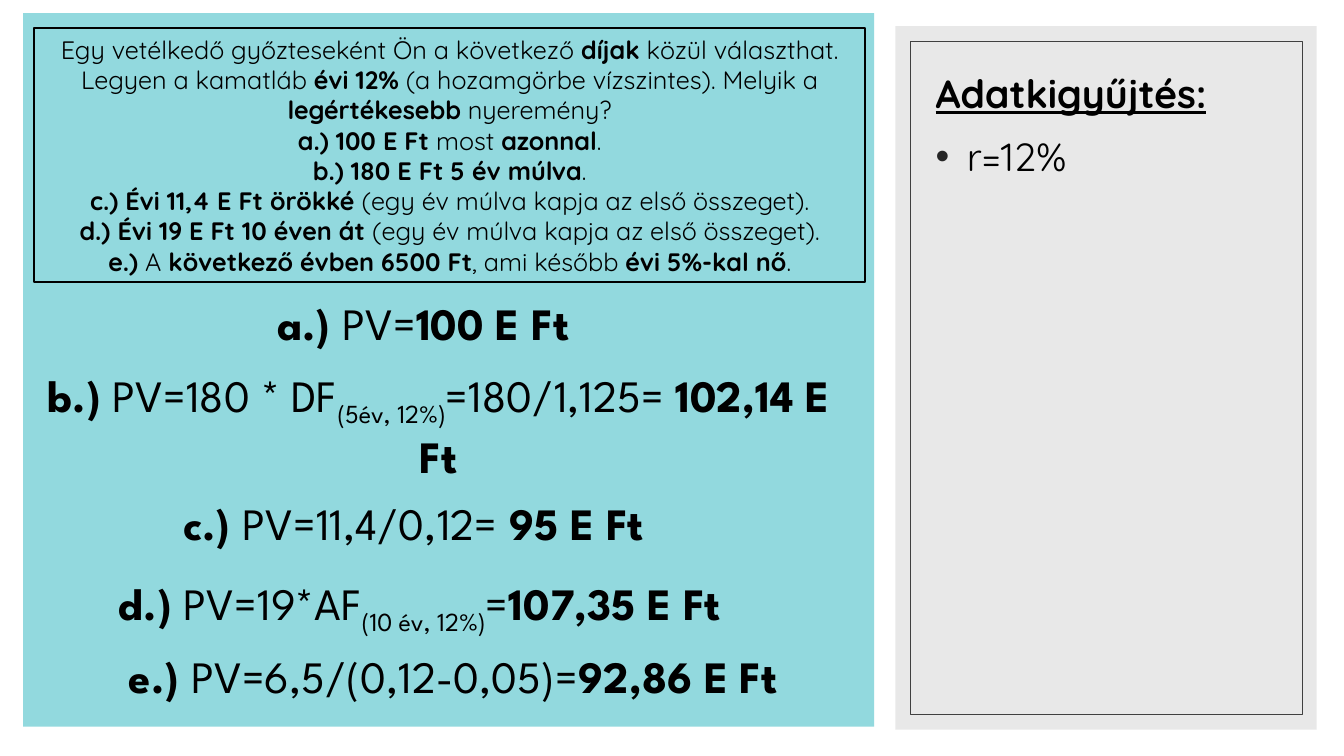
from pptx import Presentation
from pptx.dml.color import RGBColor
from pptx.enum.shapes import MSO_SHAPE
from pptx.enum.text import MSO_ANCHOR, MSO_AUTO_SIZE, PP_ALIGN
from pptx.util import Inches, Pt
from lxml import etree

COLORS = {"teal": "6ECDD3", "gray": "D9D9D9", "frame": "404040",
          "bullet": "262626", "text": "000000"}
DRAWING = "{http://schemas.openxmlformats.org/drawingml/2006/main}"

presentation = Presentation()
presentation.slide_width = Inches(13.33)
presentation.slide_height = Inches(7.5)
slide = presentation.slides.add_slide(presentation.slide_layouts[1])
slide.shapes.title.element.getparent().remove(slide.shapes.title.element)


def add_rectangle(box, fill=None, opacity=100, line=None, width=0.5):
    shape = slide.shapes.add_shape(MSO_SHAPE.RECTANGLE, *map(Inches, box))
    shape.shadow.inherit = False
    if fill:
        shape.fill.solid()
        shape.fill.fore_color.rgb = RGBColor.from_string(COLORS[fill])
        color = shape.fill._xPr.find(f".//{DRAWING}srgbClr")
        etree.SubElement(color, DRAWING + "alpha", val=str(opacity * 1000))
    else:
        shape.fill.background()
    if line:
        shape.line.color.rgb = RGBColor.from_string(COLORS[line])
        shape.line.width = Pt(width)
    else:
        shape.line.fill.background()
    return shape


def write_runs(paragraph, marked_text, font_name, size):
    """Write text where | switches bold and ~ switches subscript."""
    for i, bold_part in enumerate(marked_text.split("|")):
        for j, part in enumerate(bold_part.split("~")):
            if not part:
                continue
            run = paragraph.add_run()
            run.text = part
            run.font.name = font_name
            run.font.size = Pt(size)
            run.font.bold = i % 2 == 1
            run.font.color.rgb = RGBColor.from_string(COLORS["text"])
            if j % 2 == 1:
                run.font._element.set("baseline", "-25000")


# Side panel with its inner frame
add_rectangle((8.88, 0.26, 4.18, 6.98), fill="gray", opacity=60)
add_rectangle((9.03, 0.41, 3.89, 6.68), line="frame")

# Collected data in the body placeholder, in front of the panel
body = slide.placeholders[1]
slide.shapes._spTree.append(body.element)
body.left, body.top, body.width, body.height = map(Inches, (9.18, 0.59, 3.55, 3.09))
body.text_frame.vertical_anchor = MSO_ANCHOR.TOP
heading = body.text_frame.paragraphs[0]
rate = body.text_frame.add_paragraph()
for paragraph, text in ((heading, "|Adatkigyűjtés:|"), (rate, "r=12%")):
    write_runs(paragraph, text, "Quicksand", 28)
    paragraph.line_spacing = 1.1
    paragraph.space_before = Pt(8)
heading.runs[0].font.underline = True
properties = heading._p.get_or_add_pPr()
properties.set("marL", "0")
properties.set("indent", "0")
etree.SubElement(properties, DRAWING + "buNone")
properties = rate._p.get_or_add_pPr()
properties.set("marL", str(Inches(0.31)))
properties.set("indent", str(-Inches(0.31)))
bullet_color = etree.SubElement(properties, DRAWING + "buClr")
etree.SubElement(bullet_color, DRAWING + "srgbClr", val=COLORS["bullet"])
etree.SubElement(properties, DRAWING + "buChar", char="•")

# Teal panel and the task
add_rectangle((0.23, 0.13, 8.44, 7.08), fill="teal", opacity=75)
task = add_rectangle((0.34, 0.28, 8.24, 2.52), line="text", width=1.5)
task_lines = [
    "Egy vetélkedő győzteseként Ön a következő |díjak| közül választhat. "
    "Legyen a kamatláb |évi 12%| (a hozamgörbe vízszintes). "
    "Melyik a |legértékesebb| nyeremény?",
    "|a.) 100 E Ft |most |azonnal|.",
    "|b.) 180 E Ft 5 év múlva|.",
    "|c.) Évi 11,4 E Ft örökké |(egy év múlva kapja az első összeget).",
    "|d.) Évi 19 E Ft 10 éven át |(egy év múlva kapja az első összeget).",
    "|e.) |A |következő évben 6500 Ft|, ami később |évi 5%-kal nő|.",
]
for number, line in enumerate(task_lines):
    frame = task.text_frame
    paragraph = frame.add_paragraph() if number else frame.paragraphs[0]
    paragraph.alignment = PP_ALIGN.CENTER
    write_runs(paragraph, line, "Quicksand", 18)

# Solutions: box, wrapped and centred, left indent, text
solutions = [
    ((2.65, 2.88, 3.38, 0.64), False, 0, "|a.) |PV=|100 E Ft|"),
    ((0.23, 3.6, 8.24, 1.18), True, 0,
     "|b.) |PV=180 * DF~(5év, 12%)~=180/1,125= |102,14 E Ft|"),
    ((1.72, 4.87, 5.45, 0.64), False, 0, "|c.) |PV=11,4/0,12= |95 E Ft|"),
    ((0.58, 5.62, 7.73, 0.63), False, 0.5,
     "|d.) |PV=19*AF~(10 év, 12%)~=|107,35 E Ft|"),
    ((0.68, 6.35, 7.55, 0.63), False, 0.5,
     "|e.) |PV=6,5/(0,12-0,05)=|92,86 E Ft|"),
]
for box, wrapped, indent, text in solutions:
    frame = slide.shapes.add_textbox(*map(Inches, box)).text_frame
    frame.word_wrap = wrapped
    frame.auto_size = MSO_AUTO_SIZE.SHAPE_TO_FIT_TEXT
    paragraph = frame.paragraphs[0]
    paragraph.alignment = PP_ALIGN.CENTER if wrapped else PP_ALIGN.LEFT
    if indent:
        paragraph._p.get_or_add_pPr().set("marL", str(Inches(indent)))
        paragraph.line_spacing = 1.07
        paragraph.space_after = Pt(8)
    write_runs(paragraph, text, "League Spartan", 32)

presentation.save("out.pptx")
